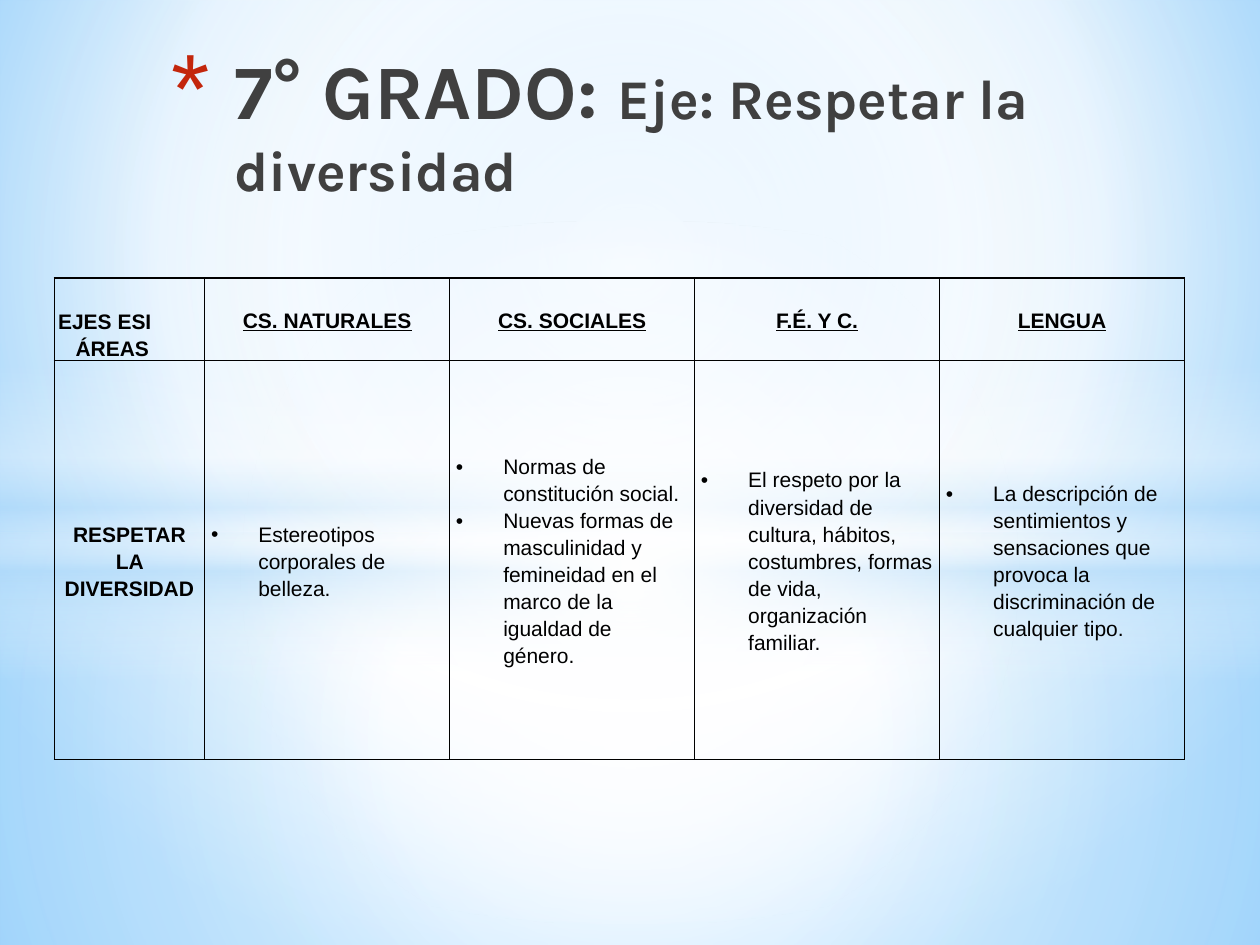
from dataclasses import dataclass

from lxml.etree import SubElement
from pptx import Presentation
from pptx.dml.color import RGBColor
from pptx.enum.shapes import MSO_SHAPE
from pptx.enum.text import MSO_ANCHOR, PP_ALIGN
from pptx.oxml.ns import qn
from pptx.util import Pt

RECTANGLE, OVAL = MSO_SHAPE.RECTANGLE, MSO_SHAPE.OVAL
TOP, MIDDLE, BOTTOM = MSO_ANCHOR.TOP, MSO_ANCHOR.MIDDLE, MSO_ANCHOR.BOTTOM
LEFT, CENTER = PP_ALIGN.LEFT, PP_ALIGN.CENTER

BLACK = RGBColor(0x00, 0x00, 0x00)
WHITE = RGBColor(0xFF, 0xFF, 0xFF)
CHARCOAL = RGBColor(0x40, 0x40, 0x40)
RED = RGBColor(0xC3, 0x26, 0x0C)
PALE_BLUE = RGBColor(0xB4, 0xDC, 0xFA)
SKY_BLUE = RGBColor(0x9E, 0xD5, 0xFF)
DEEP_BLUE = RGBColor(0x5B, 0xB9, 0xFF)


@dataclass
class Stop:
    """A gradient colour with its position and opacity in percent."""
    position: int
    color: RGBColor
    opacity: int = 100


@dataclass
class Glow:
    """A gradient shape; a focus of None means a vertical gradient."""
    kind: int
    top: float
    height: float
    stops: list[Stop]
    focus: tuple | None = (50, 50, 50, 50)


@dataclass
class Area:
    """A school subject and its topics."""
    name: str
    topics: list[str]


BACKGROUND_STOPS = [Stop(0, SKY_BLUE), Stop(60, WHITE), Stop(100, DEEP_BLUE)]
GLOWS = [
    Glow(RECTANGLE, 304.5, 235.5, [Stop(0, WHITE, 91), Stop(37, WHITE, 76), Stop(100, PALE_BLUE, 79)]),
    Glow(RECTANGLE, 0, 304.5, [Stop(0, WHITE, 89), Stop(48, WHITE, 62), Stop(100, PALE_BLUE, 79)]),
    Glow(RECTANGLE, 209, 180, [Stop(0, WHITE, 0), Stop(29, WHITE, 30), Stop(45, PALE_BLUE, 40),
                               Stop(55, WHITE, 26), Stop(65, PALE_BLUE, 60), Stop(100, WHITE, 0)], None),
    Glow(OVAL, 126, 402, [Stop(0, WHITE), Stop(54, WHITE, 0)]),
]
AREAS = [
    Area("CS. NATURALES", ["Estereotipos corporales de belleza."]),
    Area("CS. SOCIALES", ["Normas de constitución social.",
                          "Nuevas formas de masculinidad y femineidad en el marco de la igualdad de género."]),
    Area("F.É. Y C.", ["El respeto por la diversidad de cultura, hábitos, costumbres, "
                       "formas de vida, organización familiar."]),
    Area("LENGUA", ["La descripción de sentimientos y sensaciones que provoca la "
                    "discriminación de cualquier tipo."]),
]


def set_gradient(fill, element, stops: list[Stop], focus: tuple | None) -> None:
    """Give the fill held by an element a circular or vertical gradient."""
    fill.gradient()
    gradient = next(element.iter(qn("a:gradFill")))
    for child in list(gradient):
        gradient.remove(child)
    stop_list = SubElement(gradient, qn("a:gsLst"))
    for stop in stops:
        entry = SubElement(stop_list, qn("a:gs"), pos=str(stop.position * 1000))
        color = SubElement(entry, qn("a:srgbClr"), val=str(stop.color))
        if stop.opacity < 100:
            SubElement(color, qn("a:alpha"), val=str(stop.opacity * 1000))
    if focus is None:
        SubElement(gradient, qn("a:lin"), ang="5400000", scaled="0")
    else:
        circle = SubElement(gradient, qn("a:path"), path="circle")
        sides = {side: str(value * 1000) for side, value in zip("ltrb", focus)}
        SubElement(circle, qn("a:fillToRect"), **sides)


def add_glow(slide, glow: Glow, width: int) -> None:
    """Draw one soft full-width shape."""
    shape = slide.shapes.add_shape(glow.kind, 0, Pt(glow.top), width, Pt(glow.height))
    shape.shadow.inherit = False
    shape.line.fill.background()
    set_gradient(shape.fill, shape.element, glow.stops, glow.focus)


def set_bullet(paragraph, character: str, margin: float, hanging: float,
               color: RGBColor = BLACK, size: int = 100) -> None:
    """Give a paragraph a hanging bullet."""
    properties = paragraph._p.get_or_add_pPr()
    properties.set("marL", str(Pt(margin)))
    properties.set("indent", str(-Pt(hanging)))
    bullet_color = SubElement(properties, qn("a:buClr"))
    SubElement(bullet_color, qn("a:srgbClr"), val=str(color))
    SubElement(properties, qn("a:buSzPct"), val=str(size * 1000))
    SubElement(properties, qn("a:buFont"), typeface="Arial")
    SubElement(properties, qn("a:buChar"), char=character)


def add_text(paragraph, text: str, *, size: float = 12, font: str = "Arial", color: RGBColor = BLACK,
             bold: bool = False, underline: bool = False) -> None:
    """Add a formatted run to a paragraph."""
    run = paragraph.add_run()
    run.text = text
    run.font.size, run.font.name = Pt(size), font
    run.font.bold, run.font.underline = bold, underline
    run.font.color.rgb = color


def fill_cell(cell, lines: list[str], *, margin: float, anchor=MIDDLE, align=LEFT,
              bullet: bool = False, **text_format) -> None:
    """Write the paragraphs of a cell and draw its borders."""
    cell.fill.background()
    cell.vertical_anchor = anchor
    cell.margin_left = cell.margin_right = Pt(margin)
    cell.margin_top = cell.margin_bottom = 0
    frame = cell.text_frame
    for index, line in enumerate(lines):
        paragraph = frame.add_paragraph() if index else frame.paragraphs[0]
        paragraph.alignment, paragraph.line_spacing = align, 1.15
        if bullet:
            set_bullet(paragraph, "•", 27, 27)
        add_text(paragraph, line, **text_format)
    properties = cell._tc.get_or_add_tcPr()
    for index, side in enumerate(("lnL", "lnR", "lnT", "lnB")):
        border = properties.makeelement(qn(f"a:{side}"), {"w": str(Pt(1))})
        solid = SubElement(border, qn("a:solidFill"))
        SubElement(solid, qn("a:srgbClr"), val=str(BLACK))
        properties.insert(index, border)


def add_title(slide) -> None:
    """Write the title with its large red asterisk."""
    box = slide.shapes.add_textbox(Pt(76.5), Pt(21), Pt(565), Pt(113))
    frame = box.text_frame
    frame.word_wrap, frame.vertical_anchor = True, TOP
    paragraph = frame.paragraphs[0]
    set_bullet(paragraph, "*", 50.4, 36, RED, 128)
    for text, size in (("7° GRADO: ", 44), ("Eje: Respetar la diversidad", 32)):
        add_text(paragraph, text, size=size, font="Karla", color=CHARCOAL, bold=True)


def add_areas_table(slide) -> None:
    """Draw the table of subjects and topics."""
    widths, heights = [86] + [140] * len(AREAS), [47, 228]
    frame = slide.shapes.add_table(len(heights), len(widths), Pt(31), Pt(159),
                                   Pt(sum(widths)), Pt(sum(heights)))
    table = frame.table
    table.first_row = table.horz_banding = False
    for column, width in zip(table.columns, widths):
        column.width = Pt(width)
    for row, height in zip(table.rows, heights):
        row.height = Pt(height)
    corner = table.cell(0, 0)
    fill_cell(corner, ["EJES ESI", "ÁREAS"], margin=2.2, anchor=BOTTOM, bold=True)
    corner.text_frame.paragraphs[1]._p.get_or_add_pPr().set("marL", str(Pt(10)))
    fill_cell(table.cell(1, 0), ["RESPETAR LA DIVERSIDAD"], margin=3.6, align=CENTER, bold=True)
    for index, area in enumerate(AREAS, start=1):
        fill_cell(table.cell(0, index), [area.name], margin=2.2, align=CENTER, bold=True, underline=True)
        fill_cell(table.cell(1, index), area.topics, margin=3.6, bullet=True)


def main() -> None:
    """Build and save the presentation."""
    presentation = Presentation()
    presentation.slide_width, presentation.slide_height = Pt(720), Pt(540)
    slide = presentation.slides.add_slide(presentation.slide_layouts[6])
    set_gradient(slide.background.fill, slide.element, BACKGROUND_STOPS, (20, 10, 20, 60))
    for glow in GLOWS:
        add_glow(slide, glow, presentation.slide_width)
    add_title(slide)
    add_areas_table(slide)
    presentation.save("out.pptx")


if __name__ == "__main__":
    main()
